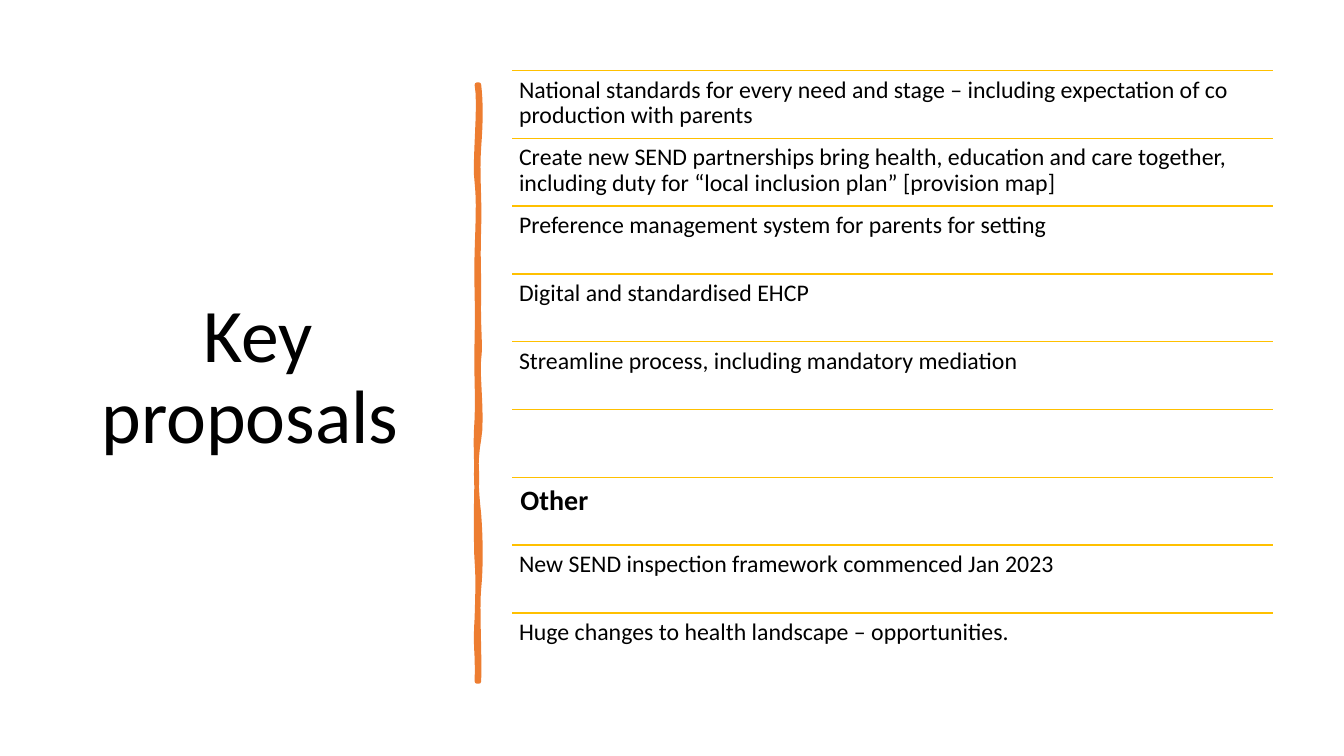
"""Build the "Key proposals" slide: a title, a wavy divider and ruled rows."""
from lxml import etree
from pptx import Presentation
from pptx.dml.color import RGBColor
from pptx.enum.shapes import MSO_CONNECTOR
from pptx.enum.text import MSO_ANCHOR, MSO_AUTO_SIZE, PP_ALIGN
from pptx.oxml.ns import qn
from pptx.util import Inches, Pt

STRAIGHT = MSO_CONNECTOR.STRAIGHT
TOP, MIDDLE = MSO_ANCHOR.TOP, MSO_ANCHOR.MIDDLE
LEFT, CENTER = PP_ALIGN.LEFT, PP_ALIGN.CENTER
NO_FIT = MSO_AUTO_SIZE.NONE

COLORS = {"text": "000000", "rule": "FFC000", "wave": "ED7D31"}
FONT = "Calibri"
GRID = 100
LIST_X, LIST_W = 38.1, 56.64
LIST_Y, STEP = 9.33, 8.97
ITEMS = [
    "National standards for every need and stage – including expectation of co production with parents",
    "Create new SEND partnerships bring health, education and care together, "
    "including duty for “local inclusion plan” [provision map]",
    "Preference management system for parents for setting",
    "Digital and standardised EHCP",
    "Streamline process, including mandatory mediation",
    "",
    "Other",
    "New SEND inspection framework commenced Jan 2023",
    "Huge changes to health landscape – opportunities.",
]
HEADING = "Other"
RIGHT_EDGE = [
    (4.75, 0.84), (4.77, 1.02), (4.77, 1.19), (4.75, 1.46),
    (4.73, 1.73), (4.76, 1.95), (4.75, 2.26),
    (4.74, 2.57), (4.75, 2.62), (4.75, 2.94),
    (4.74, 3.25), (4.77, 3.42), (4.75, 3.56),
    (4.73, 3.7), (4.79, 4.14), (4.75, 4.36),
    (4.71, 4.57), (4.72, 4.84), (4.75, 5.1),
    (4.77, 5.36), (4.77, 5.64), (4.75, 5.84),
    (4.73, 6.03), (4.76, 6.5), (4.75, 6.76),
]
LEFT_EDGE = [
    (4.73, 6.76), (4.74, 6.46), (4.71, 6.44), (4.73, 6.13),
    (4.74, 5.83), (4.74, 5.7), (4.73, 5.57),
    (4.72, 5.44), (4.72, 4.95), (4.73, 4.77),
    (4.73, 4.59), (4.71, 4.45), (4.73, 4.15),
    (4.74, 3.86), (4.72, 3.73), (4.73, 3.35),
    (4.74, 2.98), (4.72, 2.81), (4.73, 2.5),
    (4.74, 2.18), (4.75, 2), (4.73, 1.81),
    (4.7, 1.63), (4.77, 1.04), (4.73, 0.84),
]


def trace(edge, count=8):
    """Return points along a chain of cubic curves."""
    points = [edge[0]]
    for i in range(0, len(edge) - 1, 3):
        for n in range(1, count + 1):
            t = n / count
            parts = ((1 - t) ** 3, 3 * t * (1 - t) ** 2, 3 * t * t * (1 - t), t ** 3)
            points.append(tuple(
                sum(part * spot[axis] for part, spot in zip(parts, edge[i:i + 4]))
                for axis in (0, 1)))
    return points


class Deck:
    """Hold the style and the current slide."""

    def __init__(self):
        """Open a deck with one title slide."""
        self.show = Presentation()
        self.show.slide_width = Inches(13.33)
        self.show.slide_height = Inches(7.5)
        self.slide = self.show.slides.add_slide(self.show.slide_layouts[5])

    def color(self, name):
        """Return a named colour."""
        return RGBColor.from_string(COLORS[name])

    def x(self, col):
        """Turn grid columns into a length."""
        return round(self.show.slide_width * col / GRID)

    def y(self, row):
        """Turn grid rows into a length."""
        return round(self.show.slide_height * row / GRID)

    def box(self, col, row, wide, high):
        """Turn a grid cell into left, top, width and height."""
        return self.x(col), self.y(row), self.x(wide), self.y(high)

    def label(self, shape, text, size, align, anchor, bold=False, inset=None):
        """Fill a shape with one styled paragraph."""
        frame = shape.text_frame
        frame.text = text
        para = frame.paragraphs[0]
        sides = {} if inset is None else {
            f"margin_{side}": Pt(inset) for side in ("left", "top", "right", "bottom")}
        formats = (
            (frame, {"word_wrap": True, "auto_size": NO_FIT, "vertical_anchor": anchor, **sides}),
            (para, {"alignment": align, "line_spacing": 0.9}),
            (para.runs[0].font, {"name": FONT, "size": Pt(size), "bold": bold}),
        )
        for target, values in formats:
            for name, value in values.items():
                setattr(target, name, value)
        para.runs[0].font.color.rgb = self.color("text")

    def title(self, text, *cell):
        """Place the slide title."""
        shape = self.slide.shapes.title
        for name, value in zip(("left", "top", "width", "height"), self.box(*cell)):
            setattr(shape, name, value)
        self.label(shape, text, 54, CENTER, MIDDLE)

    def item(self, text, *cell):
        """Add the text of one row."""
        shape = self.slide.shapes.add_textbox(*self.box(*cell))
        head = text == HEADING
        self.label(shape, text, 20 if head else 17, LEFT, TOP, head, 6 if head else 5)

    def rule(self, col, row, wide):
        """Add a line above a row."""
        y = self.y(row)
        line = self.slide.shapes.add_connector(STRAIGHT, self.x(col), y, self.x(col + wide), y)
        line.line.color.rgb = self.color("rule")
        line.line.width = Pt(1)
        etree.SubElement(line._element.spPr, qn("a:effectLst"))

    def wave(self, points):
        """Add the hand-drawn divider."""
        spots = [(Inches(x), Inches(y)) for x, y in points]
        pen = self.slide.shapes.build_freeform(*spots[0])
        pen.add_line_segments(spots[1:], close=True)
        shape = pen.convert_to_shape()
        shape.shadow.inherit = False
        shape.fill.solid()
        shape.fill.fore_color.rgb = self.color("wave")
        shape.line.color.rgb = self.color("wave")
        shape.line.width = Pt(3.25)
        border = shape._element.spPr.find(qn("a:ln"))
        etree.SubElement(border, qn("a:round"))


def main():
    """Draw the slide and save it."""
    deck = Deck()
    deck.title("Key proposals ", 5.2, LIST_Y, 28.05, 81.5)
    deck.wave(trace(RIGHT_EDGE) + trace(LEFT_EDGE))
    for i, text in enumerate(ITEMS):
        row = LIST_Y + i * STEP
        deck.rule(LIST_X, row, LIST_W)
        if text:
            deck.item(text, LIST_X, row, LIST_W, STEP)
    deck.show.save("out.pptx")


if __name__ == "__main__":
    main()
